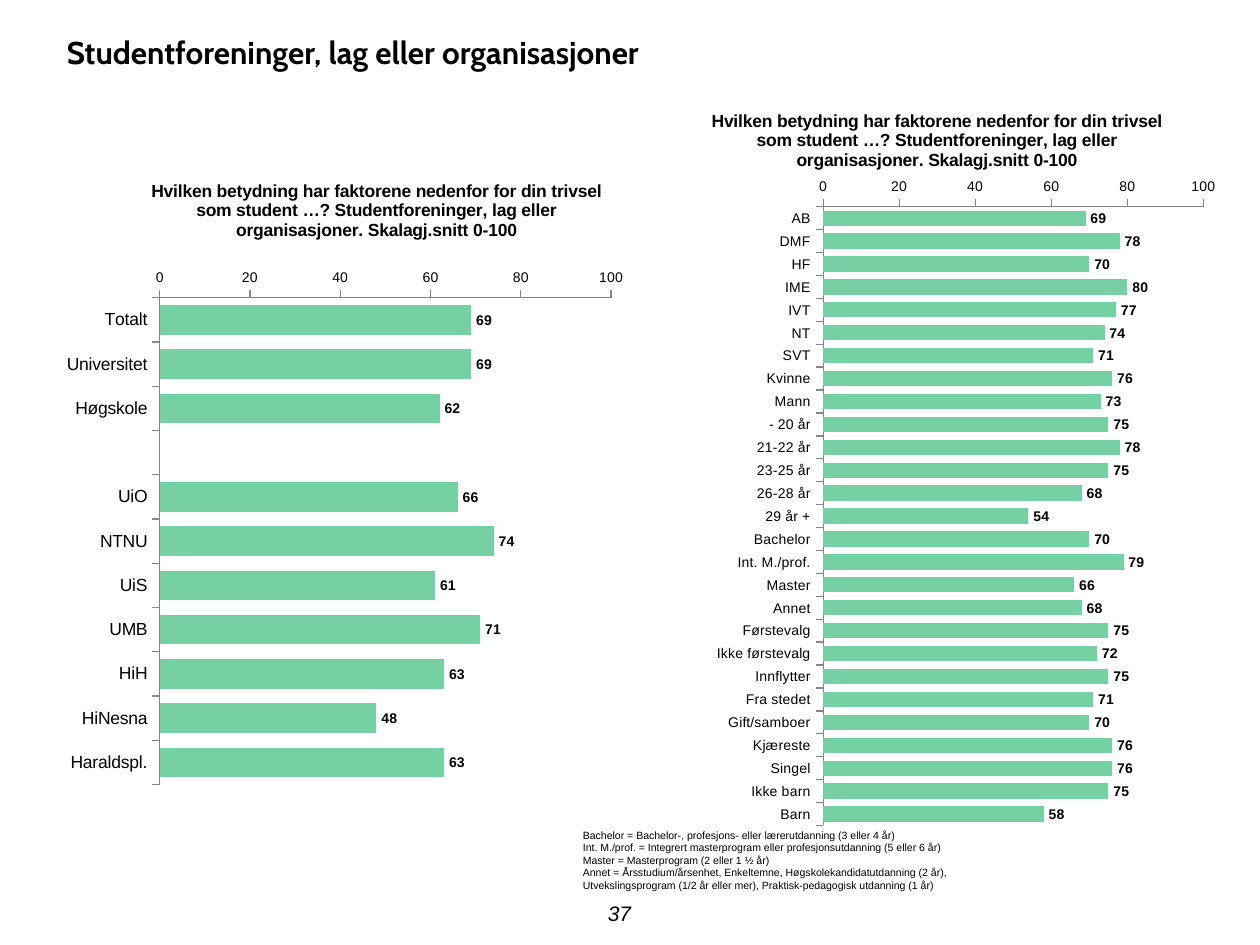
import pptx
import pptx.chart.data
import pptx.dml.color
import pptx.enum.chart
import pptx.enum.text
import pptx.util
import lxml.etree
from pptx.util import Pt

color = pptx.dml.color.RGBColor.from_string
ALIGN = pptx.enum.text.PP_ALIGN
CHART = pptx.enum.chart


def write_text(paragraph, text, size, font="Arial", bold=False, italic=False, align=ALIGN.LEFT):
    run = paragraph.add_run()
    run.text = text
    run.font.name = font
    run.font.size = Pt(size)
    run.font.bold = bold
    run.font.italic = italic
    run.font.color.rgb = color("000000")
    paragraph.alignment = align


def set_layout(element, **settings):
    namespace = element.nsmap["c"]
    layout = element.find(f"{{{namespace}}}layout")
    if layout is None:
        layout = lxml.etree.Element(f"{{{namespace}}}layout")
        element.insert(0, layout)
    manual = lxml.etree.SubElement(layout, f"{{{namespace}}}manualLayout")
    for name, value in settings.items():
        lxml.etree.SubElement(manual, f"{{{namespace}}}{name}").set("val", str(value))


presentation = pptx.Presentation()
presentation.slide_width = Pt(720)
presentation.slide_height = Pt(540)
slide = presentation.slides.add_slide(presentation.slide_layouts[5])

title = slide.shapes.title
title.left, title.top, title.width, title.height = Pt(31), Pt(15), Pt(660), Pt(29)
title.text_frame.vertical_anchor = pptx.enum.text.MSO_ANCHOR.MIDDLE
write_text(title.text_frame.paragraphs[0], "Studentforeninger, lag eller organisasjoner",
           18, font="Cabin", bold=True)

question = ("Hvilken betydning har faktorene nedenfor for din trivsel som student …? "
            "Studentforeninger, lag eller organisasjoner. Skalagj.snitt 0-100")
institutions = {
    "Totalt": 69, "Universitet": 69, "Høgskole": 62, "": None, "UiO": 66, "NTNU": 74,
    "UiS": 61, "UMB": 71, "HiH": 63, "HiNesna": 48, "Haraldspl.": 63,
}
groups = {
    "AB": 69, "DMF": 78, "HF": 70, "IME": 80, "IVT": 77, "NT": 74, "SVT": 71,
    "Kvinne": 76, "Mann": 73,
    "- 20 år": 75, "21-22 år": 78, "23-25 år": 75, "26-28 år": 68, "29 år +": 54,
    "Bachelor": 70, "Int. M./prof.": 79, "Master": 66, "Annet": 68,
    "Førstevalg": 75, "Ikke førstevalg": 72, "Innflytter": 75, "Fra stedet": 71,
    "Gift/samboer": 70, "Kjæreste": 76, "Singel": 76, "Ikke barn": 75, "Barn": 58,
}
charts = [
    (institutions, (31, 97, 335, 366), 10, (0.16, 0.01), (0.18, 0.2, 0.77, 0.76)),
    (groups, (360, 43, 345, 442), 8, (0.13, 0.04), (0.32, 0.17, 0.63, 0.8)),
]

for scores, box, category_size, title_corner, plot_box in charts:
    chart_data = pptx.chart.data.CategoryChartData(number_format="0")
    chart_data.categories = list(scores)
    chart_data.add_series("Series 1", list(scores.values()))
    chart = slide.shapes.add_chart(CHART.XL_CHART_TYPE.BAR_CLUSTERED,
                                   *map(Pt, box), chart_data).chart
    chart.has_legend = False
    chart.font.name = "Arial"
    chart.font.color.rgb = color("000000")

    chart.has_title = True
    write_text(chart.chart_title.text_frame.paragraphs[0], question, 10,
               bold=True, align=ALIGN.CENTER)
    chart.chart_title.include_in_layout = True
    set_layout(chart.chart_title._element, xMode="edge", yMode="edge",
               x=title_corner[0], y=title_corner[1])
    set_layout(chart._chartSpace.chart.plotArea, layoutTarget="inner",
               xMode="edge", yMode="edge", **dict(zip("xywh", plot_box)))

    for axis, size in ((chart.category_axis, category_size), (chart.value_axis, 8)):
        axis.has_major_gridlines = False
        axis.major_tick_mark = CHART.XL_TICK_MARK.OUTSIDE
        axis.tick_labels.font.size = Pt(size)
        axis.format.line.color.rgb = color("868686")
        axis.format.line.width = Pt(0.75)
    chart.category_axis.reverse_order = True
    chart.value_axis.minimum_scale = 0
    chart.value_axis.maximum_scale = 100
    chart.value_axis.major_unit = 20
    chart.value_axis.tick_labels.number_format = "0"
    chart.value_axis.tick_labels.number_format_is_linked = False

    plot = chart.plots[0]
    plot.gap_width = 50
    plot.vary_by_categories = False
    series = plot.series[0]
    series.format.fill.solid()
    series.format.fill.fore_color.rgb = color("75D1A3")
    labels = series.data_labels
    labels.show_value = True
    labels.position = CHART.XL_LABEL_POSITION.OUTSIDE_END
    labels.number_format = "0"
    labels.number_format_is_linked = False
    labels.font.size = Pt(8)
    labels.font.bold = True
    labels.font.color.rgb = color("000000")

notes = [
    "Bachelor = Bachelor-, profesjons- eller lærerutdanning (3 eller 4 år)",
    "Int. M./prof. = Integrert masterprogram eller profesjonsutdanning (5 eller 6 år)",
    "Master = Masterprogram (2 eller 1 ½ år)",
    "Annet = Årsstudium/årsenhet, Enkeltemne, Høgskolekandidatutdanning (2 år), "
    "Utvekslingsprogram (1/2 år eller mer), Praktisk-pedagogisk utdanning (1 år)",
]
note_frame = slide.shapes.add_textbox(Pt(326), Pt(470), Pt(227), Pt(44)).text_frame
note_frame.word_wrap = True
for index, note in enumerate(notes):
    paragraph = note_frame.add_paragraph() if index else note_frame.paragraphs[0]
    write_text(paragraph, note, 6)

number_frame = slide.shapes.add_textbox(Pt(334), Pt(510), Pt(40), Pt(24)).text_frame
number_frame.vertical_anchor = pptx.enum.text.MSO_ANCHOR.MIDDLE
write_text(number_frame.paragraphs[0], "37", 12, italic=True, align=ALIGN.CENTER)

presentation.save("out.pptx")
